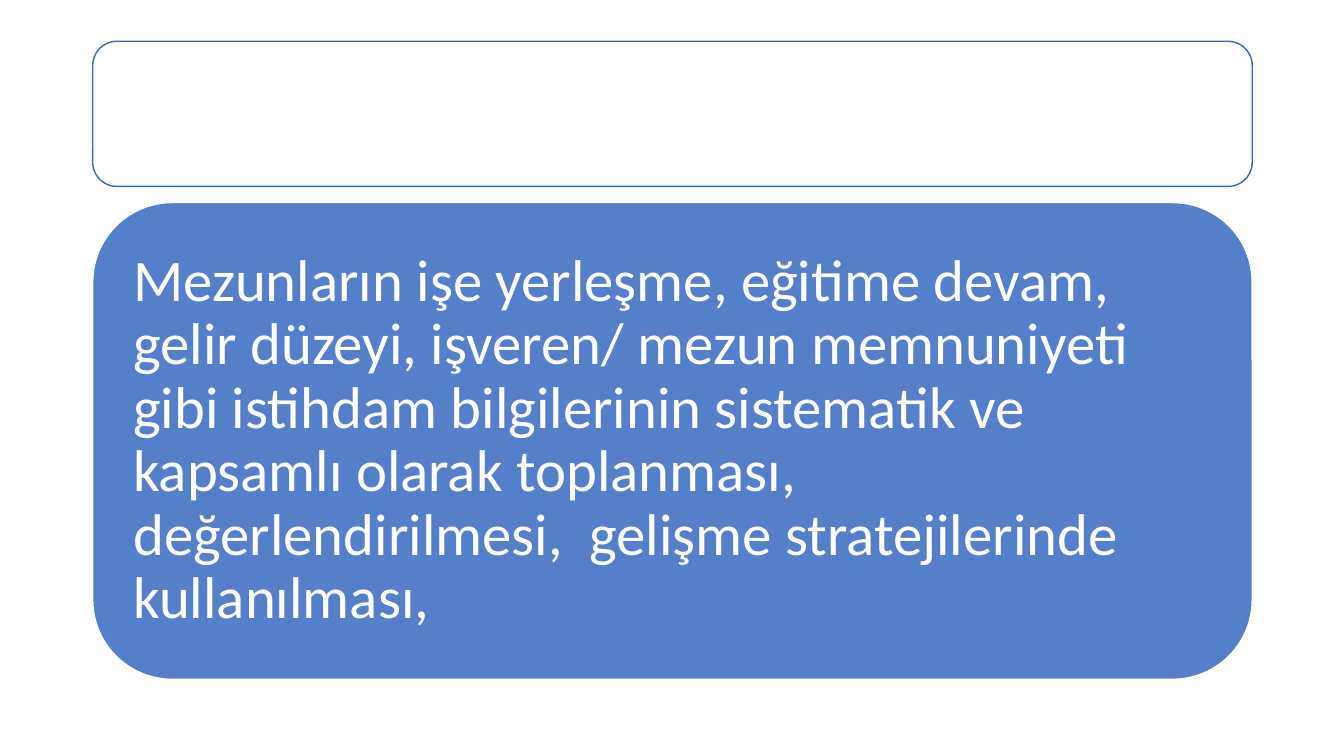
from dataclasses import dataclass

from lxml.etree import SubElement
from pptx import Presentation
from pptx.dml.color import RGBColor
from pptx.enum.shapes import MSO_SHAPE as Shape
from pptx.enum.text import MSO_ANCHOR as Anchor, PP_ALIGN as Align
from pptx.oxml.ns import qn
from pptx.util import Inches, Pt


@dataclass(frozen=True)
class Theme:
    white: RGBColor = RGBColor.from_string("FFFFFF")
    blue: RGBColor = RGBColor.from_string("4472C4")
    edge: RGBColor = RGBColor.from_string("3E67B2")
    font: str = "Calibri"
    size: int = 42


THEME = Theme()
LEFT, WIDTH, INSET = 0.92, 11.5, 0.17
GOAL = (
    "Mezunların işe yerleşme, eğitime devam, gelir düzeyi, "
    "işveren/ mezun memnuniyeti gibi istihdam bilgilerinin sistematik ve "
    "kapsamlı olarak toplanması, değerlendirilmesi,  gelişme "
    "stratejilerinde kullanılması,"
)


def add_panel(slide, top, height, fill, line):
    panel = slide.shapes.add_shape(
        Shape.ROUNDED_RECTANGLE,
        Inches(LEFT), Inches(top), Inches(WIDTH), Inches(height),
    )
    panel.shadow.inherit = False
    panel.fill.solid()
    panel.fill.fore_color.rgb = fill
    panel.line.color.rgb = line
    panel.line.width = Pt(1)
    return panel


def set_alpha(panel, percent):
    color = panel.element.spPr.find(qn("a:solidFill")).find(qn("a:srgbClr"))
    SubElement(color, qn("a:alpha"), val=str(percent * 1000))


def add_text(panel, text):
    frame = panel.text_frame
    frame.text = text
    frame.word_wrap = True
    frame.vertical_anchor = Anchor.MIDDLE
    frame.margin_left = frame.margin_right = Inches(INSET)
    frame.margin_top = frame.margin_bottom = Inches(INSET)
    para = frame.paragraphs[0]
    para.alignment = Align.LEFT
    para.line_spacing = 0.9
    font = para.runs[0].font
    font.name = THEME.font
    font.size = Pt(THEME.size)
    font.color.rgb = THEME.white


def main():
    deck = Presentation()
    deck.slide_width = Inches(13.33)
    deck.slide_height = Inches(7.5)
    slide = deck.slides.add_slide(deck.slide_layouts[6])
    add_panel(slide, 0.41, 1.44, THEME.white, THEME.edge)
    body = add_panel(slide, 2.01, 4.73, THEME.blue, THEME.white)
    set_alpha(body, 90)
    add_text(body, GOAL)
    deck.save("out.pptx")


if __name__ == "__main__":
    main()
